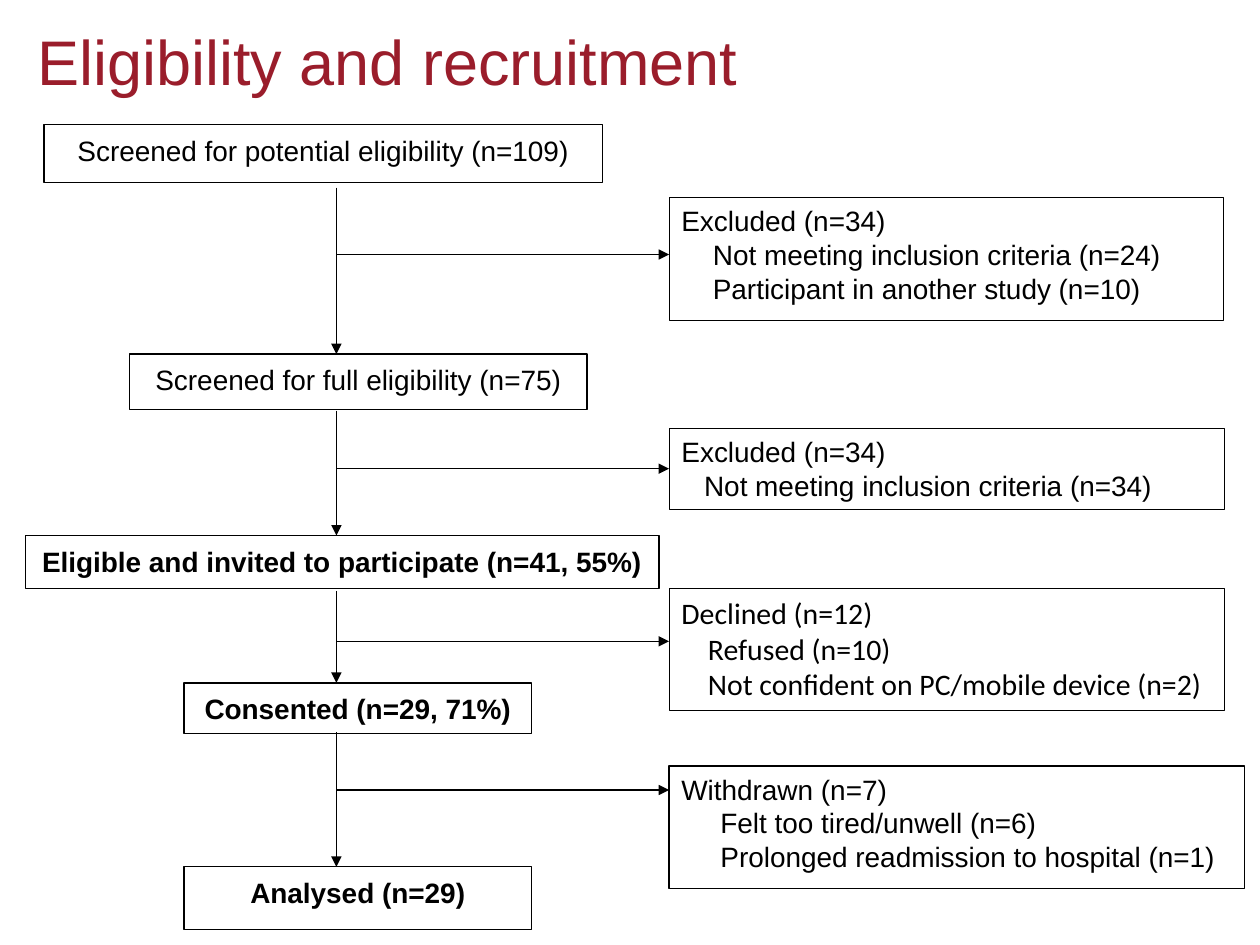
from dataclasses import dataclass

from lxml import etree
from pptx import Presentation
from pptx.dml.color import RGBColor
from pptx.enum.shapes import MSO_CONNECTOR, MSO_SHAPE
from pptx.enum.text import MSO_ANCHOR, PP_ALIGN
from pptx.oxml.ns import qn
from pptx.shapes.autoshape import Shape
from pptx.shapes.connector import Connector
from pptx.slide import Slide
from pptx.text.text import _Paragraph as Paragraph
from pptx.util import Inches, Pt

BLACK = RGBColor(0, 0, 0)
WHITE = RGBColor(255, 255, 255)
CRIMSON = RGBColor(0x9A, 0x1D, 0x2B)

FLOW_X = 2.67
EXIT_X = 5.31


@dataclass(frozen=True)
class Stage:
    text: str
    left: float
    top: float
    width: float
    height: float
    bold: bool = False


@dataclass(frozen=True)
class Exit:
    """Participants leaving the study, with the reasons listed under a heading."""
    heading: str
    reasons: tuple[str, ...]
    top: float
    width: float
    height: float
    indent: float
    branch_y: float
    font: str = "Arial"
    size: int = 16
    border: float = 0.5


STAGES = [
    Stage("Screened for potential eligibility (n=109)", 0.35, 0.99, 4.43, 0.46),
    Stage("Screened for full eligibility (n=75)", 1.03, 2.81, 3.63, 0.44),
    Stage("Eligible and invited to participate (n=41, 55%)", 0.2, 4.25, 5.03, 0.42, True),
    Stage("Consented (n=29, 71%)", 1.46, 5.42, 2.76, 0.4, True),
    Stage("Analysed (n=29)", 1.46, 6.88, 2.76, 0.5, True),
]
FLOW_STARTS = [1.49, 3.26, 4.69, 5.81]

EXITS = [
    Exit("Excluded (n=34)",
         ("Not meeting inclusion criteria (n=24)", "Participant in another study (n=10)"),
         1.57, 4.4, 0.97, indent=0.25, branch_y=2.02),
    Exit("Excluded (n=34)", ("Not meeting inclusion criteria (n=34)",),
         3.4, 4.41, 0.64, indent=0.18, branch_y=3.72),
    Exit("Declined (n=12)", ("Refused (n=10)", "Not confident on PC/mobile device (n=2)"),
         4.67, 4.41, 0.97, indent=0.21, branch_y=5.09, font="Calibri", size=17),
    Exit("Withdrawn (n=7)",
         ("Felt too tired/unwell (n=6)", "Prolonged readmission to hospital (n=1)"),
         6.08, 4.57, 0.97, indent=0.31, branch_y=6.27, border=0.75),
]


def set_font(paragraph: Paragraph, size: float, name: str = "Arial",
             color: RGBColor = BLACK, bold: bool = False) -> None:
    font = paragraph.font
    font.name, font.size, font.bold = name, Pt(size), bold
    font.color.rgb = color


def add_title(slide: Slide, text: str) -> None:
    title = slide.shapes.add_textbox(Inches(0.2), Inches(0.13), Inches(9.69), Inches(0.73))
    title.text_frame.word_wrap = True
    paragraph = title.text_frame.paragraphs[0]
    paragraph.text = text
    paragraph.alignment = PP_ALIGN.JUSTIFY
    set_font(paragraph, 36, color=CRIMSON)


def add_box(slide: Slide, left: float, top: float, width: float, height: float,
            border: float) -> Shape:
    box = slide.shapes.add_shape(MSO_SHAPE.RECTANGLE, Inches(left), Inches(top),
                                 Inches(width), Inches(height))
    box.shadow.inherit = False
    box.fill.solid()
    box.fill.fore_color.rgb = WHITE
    box.line.color.rgb = BLACK
    box.line.width = Pt(border)
    box.text_frame.word_wrap = True
    box.text_frame.vertical_anchor = MSO_ANCHOR.TOP
    return box


def add_stage(slide: Slide, stage: Stage) -> None:
    box = add_box(slide, stage.left, stage.top, stage.width, stage.height, 0.75)
    paragraph = box.text_frame.paragraphs[0]
    paragraph.text = stage.text
    paragraph.alignment = PP_ALIGN.CENTER
    paragraph.line_spacing = 1.07
    paragraph.space_after = Pt(8)
    set_font(paragraph, 16, bold=stage.bold)


def add_arrow(slide: Slide, x1: float, y1: float, x2: float, y2: float) -> Connector:
    arrow = slide.shapes.add_connector(MSO_CONNECTOR.STRAIGHT, Inches(x1), Inches(y1),
                                       Inches(x2), Inches(y2))
    arrow.line.color.rgb = BLACK
    arrow.line.width = Pt(0.75)
    etree.SubElement(arrow.line._get_or_add_ln(), qn("a:tailEnd"), type="triangle")
    etree.SubElement(arrow._element.spPr, qn("a:effectLst"))
    return arrow


def add_exit(slide: Slide, leaving: Exit) -> None:
    """Draw the box of leavers and the arrow that branches off to it."""
    box = add_box(slide, EXIT_X, leaving.top, leaving.width, leaving.height, leaving.border)
    frame = box.text_frame
    frame.text = "\n".join((leaving.heading, *leaving.reasons))
    for index, paragraph in enumerate(frame.paragraphs):
        paragraph.alignment = PP_ALIGN.LEFT
        if index:
            paragraph._p.get_or_add_pPr().set("marL", str(Inches(leaving.indent)))
        set_font(paragraph, leaving.size, leaving.font)

    branch = add_arrow(slide, FLOW_X, leaving.branch_y, EXIT_X, leaving.branch_y)
    middle = leaving.top + leaving.height / 2
    if abs(middle - leaving.branch_y) < 0.01:
        branch.end_connect(box, 1)


def main() -> None:
    presentation = Presentation()
    presentation.slide_width, presentation.slide_height = Inches(10), Inches(7.5)
    slide = presentation.slides.add_slide(presentation.slide_layouts[6])

    add_title(slide, "Eligibility and recruitment")
    for stage in STAGES:
        add_stage(slide, stage)
    for start, next_stage in zip(FLOW_STARTS, STAGES[1:]):
        add_arrow(slide, FLOW_X, start, FLOW_X, next_stage.top)
    for leaving in EXITS:
        add_exit(slide, leaving)

    presentation.save("out.pptx")


if __name__ == "__main__":
    main()
